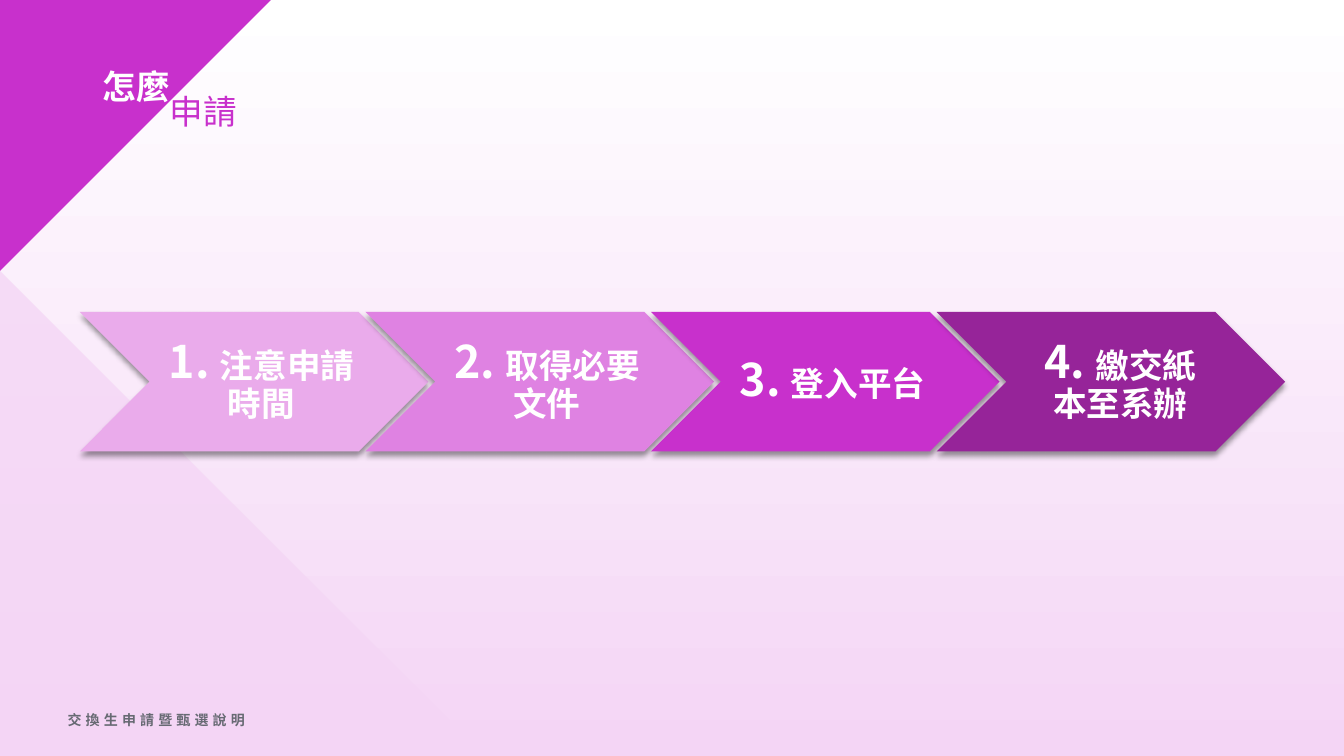
from dataclasses import dataclass

from lxml import etree
from pptx import Presentation
from pptx import util as u
from pptx.dml import color
from pptx.enum import shapes, text
from pptx.oxml import ns

FONT = "Noto Sans CJK SC"
PURPLE, PALE, WHITE = "C830CC", "F4D5F5", "FFFFFF"


@dataclass
class Triangle:
    top: int
    side: int
    rotation: int
    fill: str
    opacity: int


@dataclass
class Step:
    label: str
    fill: str
    insets: tuple[int, int, int, int] = (18, 7, 4, 7)


TRIANGLES = [Triangle(258, 465, 0, PALE, 74), Triangle(0, 258, 90, PURPLE, 100)]
STEPS = [
    Step("注意申請時間", "EAABEB"),
    Step("取得必要文件", "DF82E2"),
    Step("登入平台", PURPLE),
    Step("繳交紙本至系辦", "962499", (24, 9, 6, 9)),
]
STEP_LEFT, STEP_TOP, STEP_WIDTH, STEP_HEIGHT, STEP_PITCH = 76, 297, 332, 133, 272


def px(length: int) -> u.Emu:
    return u.Emu(length * 9525)


def rgb(value: str) -> color.RGBColor:
    return color.RGBColor.from_string(value)


def add_child(parent, tag: str, **attributes):
    child = etree.SubElement(parent, ns.qn(tag))
    for name, value in attributes.items():
        child.set(name, str(value))
    return child


def style(para, size: int, ink: str, bold: bool) -> None:
    font = para.font
    font.name, font.size, font.bold = FONT, u.Pt(size), bold
    font.color.rgb = rgb(ink)
    add_child(para._p.pPr.find(ns.qn("a:defRPr")), "a:ea", typeface=FONT)


def add_plain_shape(page, kind, left: int, top: int, width: int, height: int, fill: str):
    shape = page.shapes.add_shape(kind, px(left), px(top), px(width), px(height))
    shape.shadow.inherit = False
    shape.fill.solid()
    shape.fill.fore_color.rgb = rgb(fill)
    shape.line.fill.background()
    return shape


def draw_triangle(page, triangle: Triangle) -> None:
    shape = add_plain_shape(page, shapes.MSO_SHAPE.RIGHT_TRIANGLE, 0, triangle.top,
                            triangle.side, triangle.side, triangle.fill)
    shape.rotation = triangle.rotation
    if triangle.opacity < 100:
        tint = shape._element.spPr.find(".//" + ns.qn("a:srgbClr"))
        add_child(tint, "a:alpha", val=triangle.opacity * 1000)


def draw_step(page, index: int, step: Step) -> None:
    shape = add_plain_shape(page, shapes.MSO_SHAPE.CHEVRON, STEP_LEFT + index * STEP_PITCH,
                            STEP_TOP, STEP_WIDTH, STEP_HEIGHT, step.fill)
    # Soft shadow below
    effects = shape._element.spPr.find(ns.qn("a:effectLst"))
    shadow = add_child(effects, "a:outerShdw", blurRad=u.Pt(4), dist=u.Pt(3),
                       dir=5400000, rotWithShape=0)
    add_child(add_child(shadow, "a:srgbClr", val="000000"), "a:alpha", val=40000)
    # Large number followed by the label
    frame = shape.text_frame
    frame.word_wrap = True
    frame.vertical_anchor = text.MSO_ANCHOR.MIDDLE
    (frame.margin_left, frame.margin_top,
     frame.margin_right, frame.margin_bottom) = map(px, step.insets)
    para = frame.paragraphs[0]
    para.alignment = text.PP_ALIGN.CENTER
    para.line_spacing = 0.9
    style(para, 24, WHITE, True)
    number = para.add_run()
    number.text = f"{index + 1}. "
    number.font.size = u.Pt(32)
    para.add_run().text = step.label


def draw_title(page) -> None:
    box = page.shapes.title
    box.left, box.top, box.width, box.height = map(px, (88, 72, 235, 59))
    frame = box.text_frame
    frame.text = "怎麼\n申請"
    frame.word_wrap = True
    frame.auto_size = text.MSO_AUTO_SIZE.NONE
    frame.vertical_anchor = text.MSO_ANCHOR.TOP
    inks = ((WHITE, True), (PURPLE, False))
    for index, (para, (ink, bold)) in enumerate(zip(frame.paragraphs, inks)):
        para.alignment = text.PP_ALIGN.LEFT
        para.line_spacing = u.Pt(18)
        para.space_before = u.Pt(0)
        style(para, 24, ink, bold)
        para._p.pPr.set("marL", str(px(64 * index)))


def draw_footer(page) -> None:
    box = page.shapes.add_textbox(*map(px, (55, 667, 432, 38)))
    frame = box.text_frame
    frame.word_wrap = True
    frame.vertical_anchor = text.MSO_ANCHOR.MIDDLE
    para = frame.paragraphs[0]
    style(para, 10, "676A73", True)
    span = para.add_run()
    span.text = "交換生申請暨甄選說明"
    span._r.get_or_add_rPr().set("spc", "300")


def main() -> None:
    deck = Presentation()
    deck.slide_width, deck.slide_height = px(1280), px(720)
    page = deck.slides.add_slide(deck.slide_layouts[5])

    # Background fading downwards
    backdrop = page.background.fill
    backdrop.gradient()
    backdrop.gradient_angle = 270
    for stop, tint in zip(backdrop.gradient_stops, (WHITE, PALE)):
        stop.color.rgb = rgb(tint)

    # Corner triangles, with the title brought in front of them
    for triangle in TRIANGLES:
        draw_triangle(page, triangle)
    draw_title(page)
    page.shapes._spTree.append(page.shapes.title._element)
    draw_footer(page)

    # Application steps
    for index, step in enumerate(STEPS):
        draw_step(page, index, step)

    deck.save("out.pptx")


if __name__ == "__main__":
    main()
